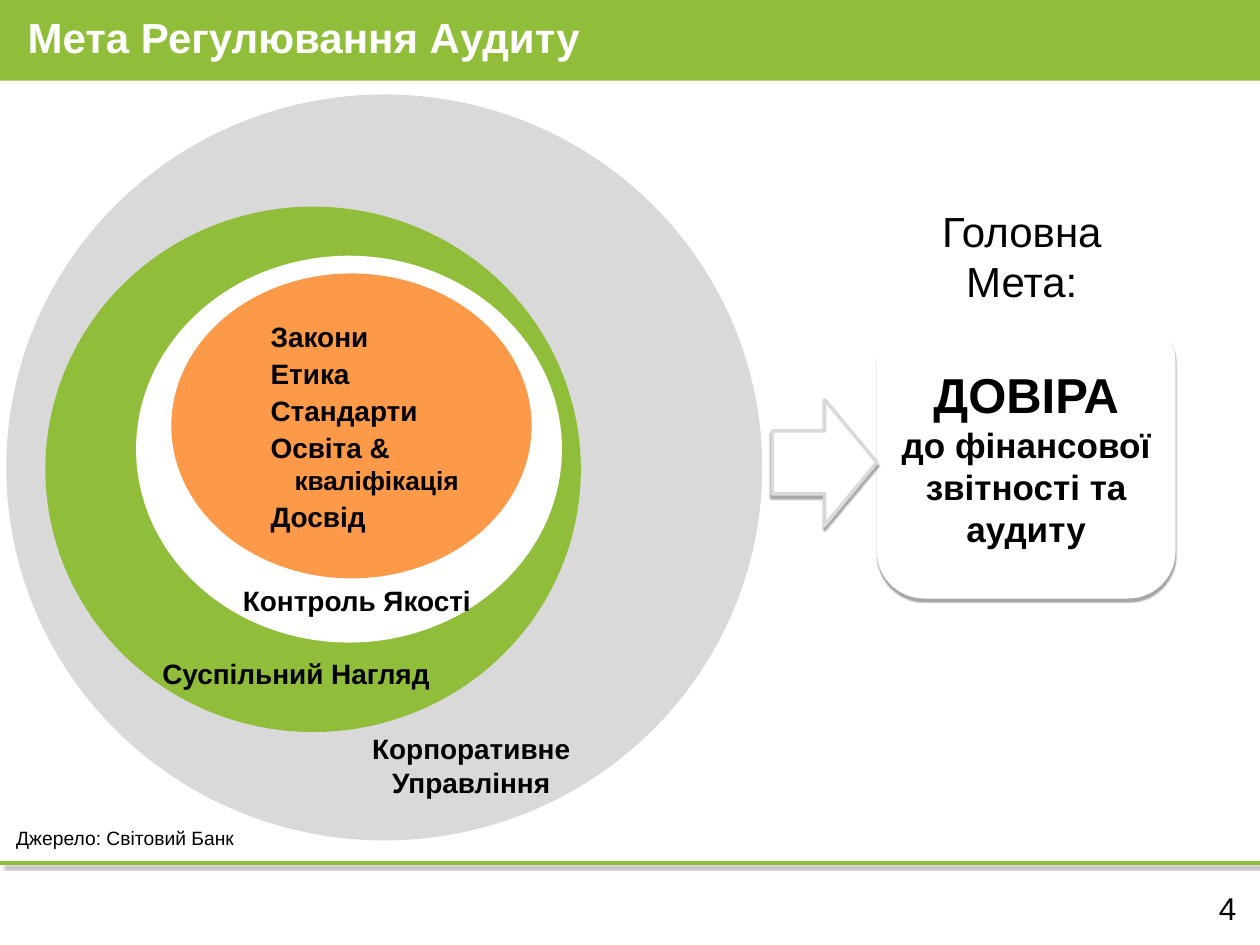
"""Build the slide on the aims of audit regulation as nested rings that lead to trust."""
from lxml.etree import SubElement
from pptx import Presentation
from pptx.dml.color import RGBColor
from pptx.enum.shapes import MSO_CONNECTOR, MSO_SHAPE
from pptx.enum.text import MSO_ANCHOR, MSO_AUTO_SIZE, PP_ALIGN
from pptx.oxml.ns import qn
from pptx.util import Inches, Pt

HUES = {"green": "91BE3A", "gray": "D9D9D9", "orange": "FD9A49",
        "white": "FFFFFF", "black": "000000"}
COLS, ROWS, CELL = 100, 75, 0.1
LEFT, MID, RIGHT = PP_ALIGN.LEFT, PP_ALIGN.CENTER, PP_ALIGN.RIGHT
TOP, CORE = MSO_ANCHOR.TOP, MSO_ANCHOR.MIDDLE
THIN, WIDE = (0.06, 0.06), (0.1, 0.05)

HEAD = [[("Мета Регулювання Аудиту", 24, True)]]
RINGS = [("gray", (0.5, 7.5, 60, 59.2)), ("green", (3.6, 16.4, 42.5, 41.7)),
         ("white", (10.8, 20.3, 33.8, 30.7)), ("orange", (13.6, 21.7, 28.6, 24.2))]
BASES = [[("Закони", 16, True)], [("Етика", 16, True)], [("Стандарти", 16, True)],
         [("Освіта & ", 16, True), ("кваліфікація", 15, True)], [("Досвід", 16, True)]]
GOAL = [[("ДОВІРА", 28, True)], [("до фінансової звітності та аудиту", 20, True)]]
CARD, ARROW = (69.6, 25, 23.7, 22.5), (61.3, 31.7, 8.3, 10)
NOTES = [
    ("Корпоративне Управління", 16, True, MID, (27.4, 57.6, 20, 6.4)),
    ("Суспільний Нагляд", 16, True, LEFT, (11.9, 51.6, 24, 3.7)),
    ("Контроль Якості", 16, True, LEFT, (18.3, 45.8, 21, 3.7)),
    ("Головна Мета:", 24, False, MID, (72.6, 15.8, 17, 9.1)),
    ("4", 18, False, RIGHT, (93.2, 70.1, 5.9, 4)),
    ("Джерело: Світовий Банк", 11, False, LEFT, (0.3, 65.1, 23.3, 2.9)),
]


def span(cells):
    return [Inches(n * CELL) for n in cells]


def tint(name):
    return RGBColor.from_string(HUES[name])


def write(shape, paras, align=LEFT, anchor=TOP, pad=WIDE, hue="black", gap=0, hang=None):
    frame = shape.text_frame
    frame.word_wrap = True
    frame.auto_size = MSO_AUTO_SIZE.NONE
    frame.vertical_anchor = anchor
    frame.margin_left = frame.margin_right = Inches(pad[0])
    frame.margin_top = frame.margin_bottom = Inches(pad[1])
    for i, runs in enumerate(paras):
        para = frame.add_paragraph() if i else frame.paragraphs[0]
        para.alignment = align
        para.space_before = Pt(gap if i else 0)
        if hang:
            props = para._p.get_or_add_pPr()
            props.set("marL", str(Inches(hang[0])))
            props.set("indent", str(Inches(hang[1])))
        for text, size, bold in runs:
            run = para.add_run()
            run.text = text
            font = run.font
            font.name, font.size, font.bold = "Arial", Pt(size), bold
            font.color.rgb = tint(hue)


def draw(slide, kind, cells, fill, line=None):
    shape = slide.shapes.add_shape(kind, *span(cells))
    shape.shadow.inherit = False
    shape.fill.solid()
    shape.fill.fore_color.rgb = tint(fill)
    if line:
        shape.line.color.rgb = tint(line)
        shape.line.width = Pt(2)
    else:
        shape.line.fill.background()
    return shape


def shade(shape, alpha, dist, angle):
    props = shape._element.spPr
    list_ = props.find(qn("a:effectLst"))
    if list_ is None:
        list_ = SubElement(props, qn("a:effectLst"))
    drop = SubElement(list_, qn("a:outerShdw"), blurRad=str(Pt(1)),
                      dist=str(Pt(dist)), dir=str(angle * 60000), rotWithShape="0")
    hue = SubElement(drop, qn("a:srgbClr"), val=HUES["black"])
    SubElement(hue, qn("a:alpha"), val=str(alpha * 1000))


def main():
    deck = Presentation()
    deck.slide_width, deck.slide_height = span((COLS, ROWS))
    slide = deck.slides.add_slide(deck.slide_layouts[5])
    shapes = slide.shapes

    rule = shapes.add_connector(MSO_CONNECTOR.STRAIGHT, *span((0, 68.5, COLS, 68.5)))
    rule.line.color.rgb = tint("green")
    rule.line.width = Pt(2)
    shade(rule, 40, 3, 45)

    draw(slide, MSO_SHAPE.RECTANGLE, (0, 0, COLS, 6.4), "green")
    title = shapes.title
    title.left, title.top, title.width, title.height = span((1.6, -0.6, 82, 7))
    write(title, HEAD, anchor=CORE, pad=THIN, hue="white")
    shapes._spTree.append(title._element)

    for fill, cells in RINGS:
        ring = draw(slide, MSO_SHAPE.OVAL, cells, fill)
    write(ring, BASES, anchor=CORE, pad=THIN, gap=2, hang=(0.5, -0.19))

    card = draw(slide, MSO_SHAPE.ROUNDED_RECTANGLE, CARD, "white")
    write(card, GOAL, MID, CORE, THIN)
    arrow = draw(slide, MSO_SHAPE.RIGHT_ARROW, ARROW, "white", "gray")
    for shape in (card, arrow):
        shade(shape, 35, 1.8, 90)

    for text, size, bold, align, cells in NOTES:
        write(shapes.add_textbox(*span(cells)), [[(text, size, bold)]], align)

    deck.save("out.pptx")


if __name__ == "__main__":
    main()
